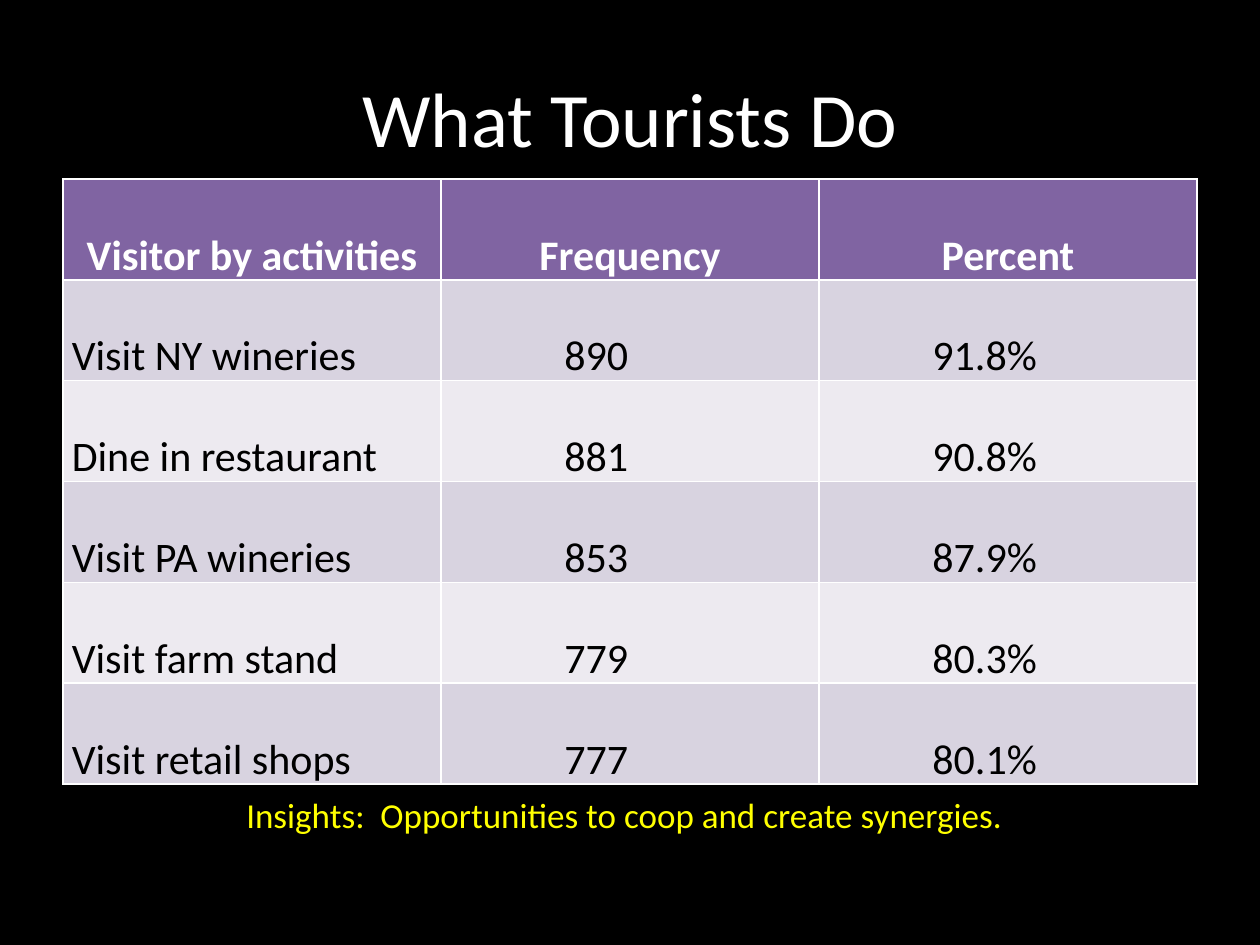
"""Build the slide on what tourists do, with its table of activities."""
from pptx import Presentation
from pptx.dml.color import RGBColor
from pptx.enum import text
from pptx.util import Inches, Pt

COLORS = {
    "background": "000000", "title": "FFFFFF", "insight": "FFFF00",
    "header": "8064A2", "header_text": "FFFFFF", "body_text": "000000",
    "odd_row": "D8D3E0", "even_row": "EDEAF0",
}
ROWS = [
    ("Visitor by activities", "Frequency", "Percent"),
    ("Visit NY wineries", "890", "91.8%"),
    ("Dine in restaurant", "881", "90.8%"),
    ("Visit PA wineries", "853", "87.9%"),
    ("Visit farm stand", "779", "80.3%"),
    ("Visit retail shops", "777", "80.1%"),
]
BODY_INSETS = [0.07, 0.98, 0.9]


def style(paragraph, size, color, bold=False, align=text.PP_ALIGN.CENTER):
    paragraph.alignment = align
    paragraph.font.name = "Calibri"
    paragraph.font.size = Pt(size)
    paragraph.font.bold = bold
    paragraph.font.color.rgb = RGBColor.from_string(COLORS[color])


def add_line(box, words, size, color, anchor):
    frame = slide.shapes.add_textbox(*map(Inches, box)).text_frame
    frame.word_wrap = True
    frame.vertical_anchor = anchor
    frame.text = words
    style(frame.paragraphs[0], size, color)


prs = Presentation()
prs.slide_width, prs.slide_height = Inches(10), Inches(7.5)
slide = prs.slides.add_slide(prs.slide_layouts[6])
slide.background.fill.solid()
slide.background.fill.fore_color.rgb = RGBColor.from_string(COLORS["background"])

add_line((0.5, 0.3, 9, 1.25), "What Tourists Do", 44, "title", text.MSO_ANCHOR.MIDDLE)

activities = slide.shapes.add_table(
    len(ROWS), 3, Inches(0.5), Inches(1.42), Inches(9), Inches(0.76 * len(ROWS))
).table
for r, row in enumerate(ROWS):
    is_header = r == 0
    band = "header" if is_header else "odd_row" if r % 2 else "even_row"
    for c, words in enumerate(row):
        cell = activities.cell(r, c)
        cell.fill.solid()
        cell.fill.fore_color.rgb = RGBColor.from_string(COLORS[band])
        cell.vertical_anchor = text.MSO_ANCHOR.BOTTOM
        cell.margin_left = Inches(0.07 if is_header else BODY_INSETS[c])
        cell.margin_right = Inches(0.07)
        cell.margin_top = cell.margin_bottom = 0
        cell.text = words
        label = cell.text_frame.paragraphs[0]
        label.line_spacing = 2.0
        label.space_before = label.space_after = Pt(2)
        if is_header:
            style(label, 24, "header_text", bold=True)
        else:
            style(label, 24, "body_text", align=text.PP_ALIGN.LEFT)

add_line((0.58, 6.25, 8.75, 0.44), "Insights:  Opportunities to coop and create synergies.",
         20, "insight", text.MSO_ANCHOR.TOP)

prs.save("out.pptx")
